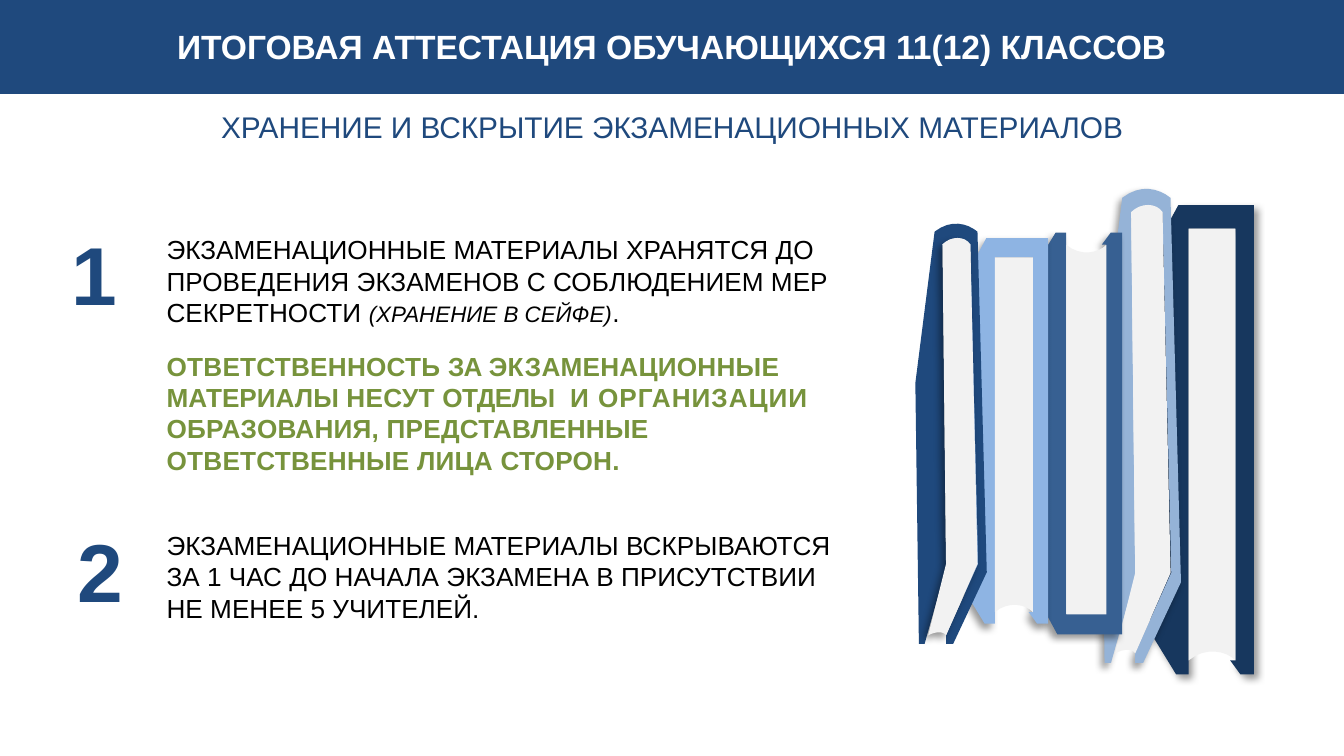
from lxml import etree
from pptx import Presentation, util as u
from pptx.dml.color import RGBColor
from pptx.enum import shapes, text
from pptx.oxml import ns

NAVY, GREEN, BLACK, WHITE, PAPER = "1F497D", "77933C", "000000", "FFFFFF", "F2F2F2"
FONT = "Arial"
CURVE_STEPS = 8

TITLE = "ИТОГОВАЯ АТТЕСТАЦИЯ ОБУЧАЮЩИХСЯ 11(12) КЛАССОВ"
SUBTITLE = "ХРАНЕНИЕ И ВСКРЫТИЕ ЭКЗАМЕНАЦИОННЫХ МАТЕРИАЛОВ"

# Spans: (text, changes to the paragraph's font)
STORAGE = [
    ("ЭКЗАМЕНАЦИОННЫЕ МАТЕРИАЛЫ ХРАНЯТСЯ ДО ПРОВЕДЕНИЯ ЭКЗАМЕНОВ "
     "С СОБЛЮДЕНИЕМ МЕР СЕКРЕТНОСТИ ", {}),
    ("(ХРАНЕНИЕ В СЕЙФЕ)", {"size": u.Pt(12), "italic": True}),
    (".", {}),
]
# Spans: (text, letter spacing in points)
DUTY = [
    ("ОТВЕТСТВЕННОСТЬ ", 0.1), ("ЗА ", -0.5), ("ЭКЗАМЕНАЦИОННЫЕ ", 0.1),
    ("МАТЕРИАЛЫ ", 0), ("НЕСУТ ", 0.1), ("ОТДЕЛЫ", -0.3), (" ", 4),
    ("И ОРГАНИЗАЦИИ ", 0.5),
    ("ОБРАЗОВАНИЯ, ПРЕДСТАВЛЕННЫЕ ОТВЕТСТВЕННЫЕ ЛИЦА СТОРОН.", 0.1),
]
OPENING = ("ЭКЗАМЕНАЦИОННЫЕ МАТЕРИАЛЫ ВСКРЫВАЮТСЯ ЗА 1 ЧАС ДО НАЧАЛА "
           "ЭКЗАМЕНА В ПРИСУТСТВИИ НЕ МЕНЕЕ 5 УЧИТЕЛЕЙ.")

# Book outlines as shares of the book's width and height.
# Two numbers are a corner, six are a cubic curve.
UPRIGHT = {
    "cover": [(0, 0.91), (0.25, 1), (0.37, 1), (0.37, 0.05), (0.82, 0.05),
              (0.82, 0.97), (0.77, 0.97), (0.87, 1), (1, 1), (1, 0),
              (0.27, 0), (0, 0.11)],
    "pages": [(0.37, 0.97), (0.37, 0.05), (0.82, 0.05), (0.82, 0.97),
              (0.74, 0.95, 0.53, 0.94, 0.37, 0.97)],
}
LEANING = {
    "cover": [(0.43, 0.98), (0.43, 1), (0.53, 1), (1, 0.83), (0.87, 0.02),
              (0.72, 0, 0.5, -0.01, 0.27, 0.02), (0, 0.38), (0.05, 1),
              (0.13, 1), (0.43, 0.82), (0.38, 0.05), (0.77, 0.05), (0.88, 0.81)],
    "pages": [(0.18, 0.98), (0.28, 0.97, 0.4, 0.97, 0.43, 0.98), (0.87, 0.81),
              (0.77, 0.05), (0.69, 0.03, 0.5, 0.03, 0.38, 0.05), (0.43, 0.81)],
}
# Books from back to front: outlines, colour, left, top, width, height in cm,
# upside down, shadow direction, part that casts the shadow
BOOKS = [
    (UPRIGHT, "17375E", (21.74, 3.88, 1.96, 8.87), False, 45, "cover"),
    (LEANING, "95B3D7", (20.8, 3.56, 1.52, 8.97), False, 135, "cover"),
    (UPRIGHT, "376092", (19.53, 4.4, 1.68, 7.59), True, 135, "cover"),
    (UPRIGHT, "8EB4E3", (18.21, 4.5, 1.6, 7.29), False, 135, "cover"),
    (LEANING, NAVY, (17.3, 4.22, 1.35, 7.95), False, 135, "pages"),
]


def color(value):
    return RGBColor.from_string(value)


def style(para, size, fill, bold=False, align=text.PP_ALIGN.LEFT):
    para.alignment = align
    font = para.font
    font.name, font.size, font.bold = FONT, u.Pt(size), bold
    font.color.rgb = color(fill)


def set_insets(frame, side, top):
    frame.margin_left = frame.margin_right = u.Cm(side)
    frame.margin_top = frame.margin_bottom = u.Cm(top)


def add_text_box(page, left, top, width, height):
    frame = page.shapes.add_textbox(*map(u.Cm, (left, top, width, height))).text_frame
    frame.word_wrap = True
    frame.auto_size = text.MSO_AUTO_SIZE.SHAPE_TO_FIT_TEXT
    return frame


def flatten(outline):
    """Turn corners and cubic curves into a list of points."""
    points = []
    for step in outline:
        if len(step) == 2:
            points.append(step)
            continue
        controls = [points[-1], step[:2], step[2:4], step[4:]]
        for i in range(1, CURVE_STEPS + 1):
            t = i / CURVE_STEPS
            weights = ((1 - t) ** 3, 3 * t * (1 - t) ** 2, 3 * t * t * (1 - t), t ** 3)
            points.append(tuple(sum(w * c[axis] for w, c in zip(weights, controls))
                                for axis in (0, 1)))
    return points


def add_shadow(shape, direction):
    effects = shape._element.spPr.find(ns.qn("a:effectLst"))
    shadow = etree.SubElement(effects, ns.qn("a:outerShdw"), blurRad=str(u.Pt(4)),
                              dist=str(u.Pt(3)), dir=str(direction * 60000),
                              algn="ctr", rotWithShape="0")
    tint = etree.SubElement(shadow, ns.qn("a:srgbClr"), val=BLACK)
    etree.SubElement(tint, ns.qn("a:alpha"), val="40000")


def add_book(books, outlines, cover, place, upside_down, direction, shaded):
    left, top, width, height = place
    for part, fill in (("cover", cover), ("pages", PAPER)):
        start, *rest = [
            (u.Cm(left + x * width), u.Cm(top + (1 - y if upside_down else y) * height))
            for x, y in flatten(outlines[part])]
        builder = books.shapes.build_freeform(*start)
        builder.add_line_segments(rest, close=True)
        shape = builder.convert_to_shape()
        shape.shadow.inherit = False
        shape.fill.solid()
        shape.fill.fore_color.rgb = color(fill)
        shape.line.fill.background()
        if part == shaded:
            add_shadow(shape, direction)


deck = Presentation()
deck.slide_width, deck.slide_height = u.Cm(25.4), u.Cm(14.29)
page = deck.slides.add_slide(deck.slide_layouts[6])
CENTER = text.PP_ALIGN.CENTER

# Title band
band = page.shapes.add_shape(shapes.MSO_SHAPE.RECTANGLE, 0, 0, deck.slide_width, u.Cm(1.75))
band.shadow.inherit = False
band.fill.solid()
band.fill.fore_color.rgb = band.line.color.rgb = color(NAVY)
band.line.width = u.Pt(2)
frame = band.text_frame
frame.word_wrap = True
frame.vertical_anchor = text.MSO_ANCHOR.MIDDLE
set_insets(frame, 0.18, 0.1)
frame.text = TITLE
style(frame.paragraphs[0], 18, WHITE, True, CENTER)

# Subtitle
frame = add_text_box(page, 0.71, 1.96, 24, 0.89)
set_insets(frame, 0.18, 0.1)
frame.text = SUBTITLE
style(frame.paragraphs[0], 16, NAVY, align=CENTER)

# Item numbers
for number, top, width in (("1", 4.09, 1.8), ("2", 9.7, 2.01)):
    frame = add_text_box(page, 0.89, top, width, 2.13)
    frame.vertical_anchor = text.MSO_ANCHOR.MIDDLE
    frame.text = number
    style(frame.paragraphs[0], 44, NAVY, True, CENTER)

# First item: storage rule and responsibility
frame = add_text_box(page, 2.9, 4.29, 13.59, 4.88)
para = frame.paragraphs[0]
style(para, 14, BLACK)
for words, changes in STORAGE:
    span = para.add_run()
    span.text = words
    for name, value in changes.items():
        setattr(span.font, name, value)
para = frame.add_paragraph()
style(para, 14, GREEN, True)
para.space_before = u.Pt(12)
for words, spacing in DUTY:
    span = para.add_run()
    span.text = words
    span.font._element.set("spc", str(round(spacing * 100)))

# Books
books = page.shapes.add_group_shape()
for book in BOOKS:
    add_book(books, *book)

# Second item: opening rule
frame = add_text_box(page, 2.9, 9.88, 13.59, 2.06)
frame.text = OPENING
style(frame.paragraphs[0], 14, BLACK)

deck.save("out.pptx")
